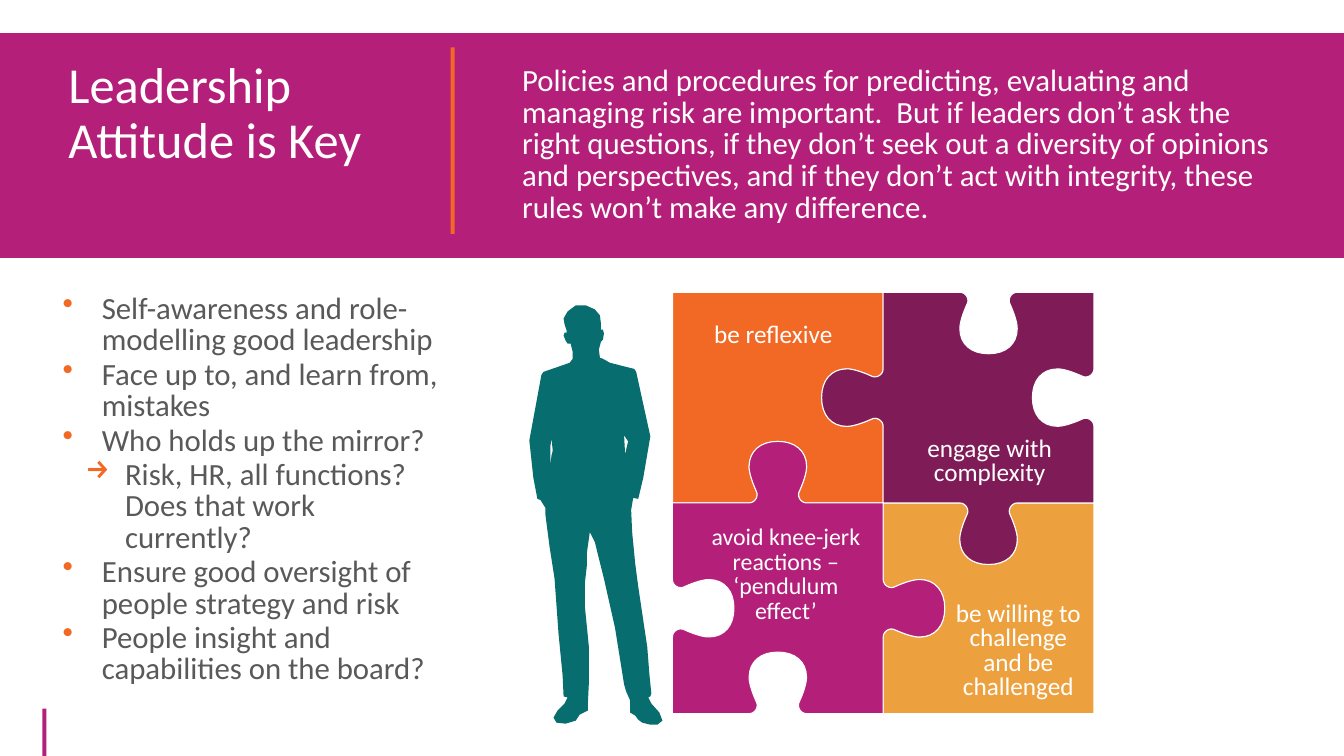
from lxml import etree
from pptx import Presentation
from pptx.dml.color import RGBColor
from pptx.enum.shapes import MSO_SHAPE
from pptx.enum.text import MSO_ANCHOR, MSO_AUTO_SIZE, PP_ALIGN
from pptx.oxml.ns import qn
from pptx.util import Inches, Pt

MAGENTA = RGBColor(0xB4, 0x1F, 0x7A)
ORANGE = RGBColor(0xF1, 0x69, 0x24)
PURPLE = RGBColor(0x7F, 0x1C, 0x58)
GOLD = RGBColor(0xED, 0xA1, 0x3E)
TEAL = RGBColor(0x08, 0x6D, 0x6E)
GREY = RGBColor(0x59, 0x59, 0x59)
WHITE = RGBColor(0xFF, 0xFF, 0xFF)

INTRO = (
    "Policies and procedures for predicting, evaluating and managing risk are "
    "important.  But if leaders don’t ask the right questions, if they don’t "
    "seek out a diversity of opinions and perspectives, and if they don’t act "
    "with integrity, these rules won’t make any difference."
)

# Bullet sign, left margin, wording
POINTS = [
    ("•", 0.39, "Self-awareness and role-modelling good leadership"),
    ("•", 0.39, "Face up to, and learn from, mistakes"),
    ("•", 0.39, "Who holds up the mirror?"),
    ("→", 0.62, "Risk, HR, all functions?\vDoes that work currently?"),
    ("•", 0.39, "Ensure good oversight of people strategy and risk"),
    ("•", 0.39, "People insight and capabilities on the board?"),
]

# Puzzle grid: column, row, colour, then top, right, bottom and left sides
# (1 knob, -1 socket, 0 straight)
PUZZLE_X, PUZZLE_Y, SIDE = 6.67, 2.9, 2.09
PIECES = [
    (0, 0, ORANGE, (0, -1, -1, 0)),
    (1, 1, GOLD, (-1, 0, 0, -1)),
    (1, 0, PURPLE, (-1, -1, 1, 1)),
    (0, 1, MAGENTA, (1, 1, -1, -1)),
]
DIRECTIONS = [(1, 0), (0, 1), (-1, 0), (0, -1)]

# First half of a knob as Bezier curves: distance along the side, height
KNOB = [
    [(0.76, 0), (0.82, 0), (0.86, 0.07), (0.83, 0.12)],
    [(0.83, 0.12), (0.79, 0.21), (0.76, 0.3), (0.76, 0.36)],
    [(0.76, 0.36), (0.76, 0.52), (0.88, 0.61), (1.04, 0.61)],
]

# Left, top, width, height, size, wording
LABELS = [
    (7.04, 3.19, 1.26, 0.3, 18, "be reflexive"),
    (8.84, 4.31, 1.95, 0.55, 18, "engage with complexity"),
    (6.95, 5.18, 1.69, 1.05, 17, "avoid knee-jerk\vreactions –\v‘pendulum effect’"),
    (9.2, 5.94, 1.8, 1.05, 18, "be willing to challenge\vand be challenged"),
]

# Standing figure: body outline, then the gaps beside the two arms
FIGURE = [
    [(6.43, 6.92), (6.45, 6.91), (6.46, 6.88), (6.44, 6.68), (6.42, 6.42),
     (6.33, 5.82), (6.3, 5.59), (6.27, 5.28), (6.26, 5.06), (6.28, 4.94),
     (6.33, 4.95), (6.38, 4.74), (6.45, 4.33), (6.31, 3.69), (6.29, 3.66),
     (6.05, 3.6), (5.98, 3.56), (5.95, 3.55), (5.94, 3.47), (5.96, 3.39),
     (5.98, 3.37), (5.99, 3.31), (5.98, 3.27), (5.96, 3.27), (5.96, 3.21),
     (5.95, 3.13), (5.9, 3.07), (5.81, 3.03), (5.71, 3.03), (5.63, 3.09),
     (5.59, 3.16), (5.6, 3.22), (5.62, 3.28), (5.62, 3.3), (5.6, 3.3),
     (5.59, 3.33), (5.61, 3.38), (5.63, 3.41), (5.66, 3.41), (5.68, 3.49),
     (5.68, 3.56), (5.65, 3.6), (5.39, 3.69), (5.37, 3.72), (5.25, 4.37),
     (5.29, 4.74), (5.33, 4.95), (5.36, 4.96), (5.41, 5.04), (5.41, 5.11),
     (5.45, 5.42), (5.5, 5.74), (5.54, 6.29), (5.58, 6.7), (5.59, 6.91),
     (5.63, 6.92), (5.6, 6.98), (5.53, 7.05), (5.49, 7.12), (5.52, 7.17),
     (5.61, 7.18), (5.71, 7.15), (5.75, 7.09), (5.83, 7.05), (5.83, 6.99),
     (5.84, 6.79), (5.84, 6.41), (5.8, 6.01), (5.8, 5.79), (5.82, 5.62),
     (5.82, 5.49), (5.85, 5.28), (5.9, 5.38), (5.99, 5.74), (6.1, 6.23),
     (6.19, 6.79), (6.21, 6.86), (6.25, 6.95), (6.25, 7.07), (6.3, 7.1),
     (6.33, 7.14), (6.37, 7.17), (6.45, 7.19), (6.52, 7.19), (6.57, 7.15),
     (6.54, 7.07), (6.46, 6.98)],
    [(5.48, 4.48), (5.47, 4.52), (5.46, 4.61), (5.46, 4.42), (5.47, 4.35),
     (5.48, 4.45)],
    [(6.22, 4.42), (6.2, 4.51), (6.19, 4.32), (6.23, 4.38)],
]


def bar(slide, left, top, width, height, color):
    shape = slide.shapes.add_shape(
        MSO_SHAPE.RECTANGLE, Inches(left), Inches(top), Inches(width), Inches(height))
    shape.shadow.inherit = False
    shape.fill.solid()
    shape.fill.fore_color.rgb = color
    shape.line.fill.background()


def frame(slide, left, top, width, height, tight=False):
    box = slide.shapes.add_textbox(
        Inches(left), Inches(top), Inches(width), Inches(height)).text_frame
    box.word_wrap = True
    if tight:
        box.margin_left = box.margin_right = Inches(0.04)
        box.margin_top = box.margin_bottom = Inches(0.02)
        box.auto_size = MSO_AUTO_SIZE.SHAPE_TO_FIT_TEXT
    return box


def write(para, text, size, color, spacing):
    para.text = text
    para.line_spacing = spacing
    para.font.name = "Calibri"
    para.font.size = Pt(size)
    para.font.color.rgb = color


def bullet(para, sign, margin):
    props = para._p.get_or_add_pPr()
    props.set("marL", str(Inches(margin)))
    props.set("indent", str(Inches(-0.39)))
    tint = etree.SubElement(props, qn("a:buClr"))
    etree.SubElement(tint, qn("a:srgbClr"), val=str(ORANGE))
    etree.SubElement(props, qn("a:buChar"), char=sign)


def outline(slide, loops, color, edge=None):
    loops = [[(Inches(x), Inches(y)) for x, y in loop] for loop in loops]
    pen = slide.shapes.build_freeform(*loops[0][0])
    pen.add_line_segments(loops[0][1:], close=True)
    for loop in loops[1:]:
        pen.move_to(*loop[0])
        pen.add_line_segments(loop[1:], close=True)
    shape = pen.convert_to_shape()
    shape.shadow.inherit = False
    shape.fill.solid()
    shape.fill.fore_color.rgb = color
    if edge is None:
        shape.line.fill.background()
    else:
        shape.line.color.rgb = edge
        shape.line.width = Pt(0.75)


def curve(points, steps=8):
    weights = [((1 - t) ** 3, 3 * t * (1 - t) ** 2, 3 * t * t * (1 - t), t ** 3)
               for t in (i / steps for i in range(steps + 1))]
    return [tuple(sum(w * p[axis] for w, p in zip(row, points)) for axis in (0, 1))
            for row in weights]


def piece(slide, col, row, color, sides):
    half = [point for part in KNOB for point in curve(part)]
    knob = half + [(SIDE - along, high) for along, high in reversed(half)]
    x, y = PUZZLE_X + col * SIDE, PUZZLE_Y + row * SIDE
    loop = []
    for (dx, dy), side in zip(DIRECTIONS, sides):
        loop.append((x, y))
        if side:
            loop += [(x + dx * along + dy * side * high,
                      y + dy * along - dx * side * high) for along, high in knob]
        x, y = x + dx * SIDE, y + dy * SIDE
    outline(slide, [loop], color, WHITE)


def label(slide, left, top, width, height, size, text):
    box = frame(slide, left, top, width, height, tight=True)
    box.vertical_anchor = MSO_ANCHOR.MIDDLE
    para = box.paragraphs[0]
    para.alignment = PP_ALIGN.CENTER
    write(para, text, size, WHITE, Pt(17.6))


def listing(slide):
    box = frame(slide, 0.58, 2.9, 3.88, 3.88, tight=True)
    for i, (sign, margin, text) in enumerate(POINTS):
        para = box.add_paragraph() if i else box.paragraphs[0]
        bullet(para, sign, margin)
        write(para, text, 22, GREY, Pt(22.4))
        if i:
            para.space_before = Pt(2.2)


def main():
    deck = Presentation()
    deck.slide_width, deck.slide_height = Inches(13.33), Inches(7.5)
    slide = deck.slides.add_slide(deck.slide_layouts[6])

    # Header band with title and introduction
    bar(slide, 0.42, 7.03, 0.04, 0.47, MAGENTA)
    bar(slide, 0, 0.33, 13.33, 2.23, MAGENTA)
    intro = frame(slide, 5.08, 0.6, 7.67, 1.96)
    write(intro.paragraphs[0], INTRO, 22, WHITE, Pt(22.8))
    title = frame(slide, 0.58, 0.55, 3.32, 2.31)
    write(title.paragraphs[0], "Leadership Attitude is Key", 36, WHITE, 0.9)
    bar(slide, 4.47, 0.47, 0.04, 1.85, ORANGE)

    # Puzzle and its labels
    for item in PIECES:
        piece(slide, *item)
    for item in LABELS:
        label(slide, *item)

    # Standing figure and bullet list
    outline(slide, FIGURE, TEAL)
    listing(slide)

    deck.save("out.pptx")


if __name__ == "__main__":
    main()
